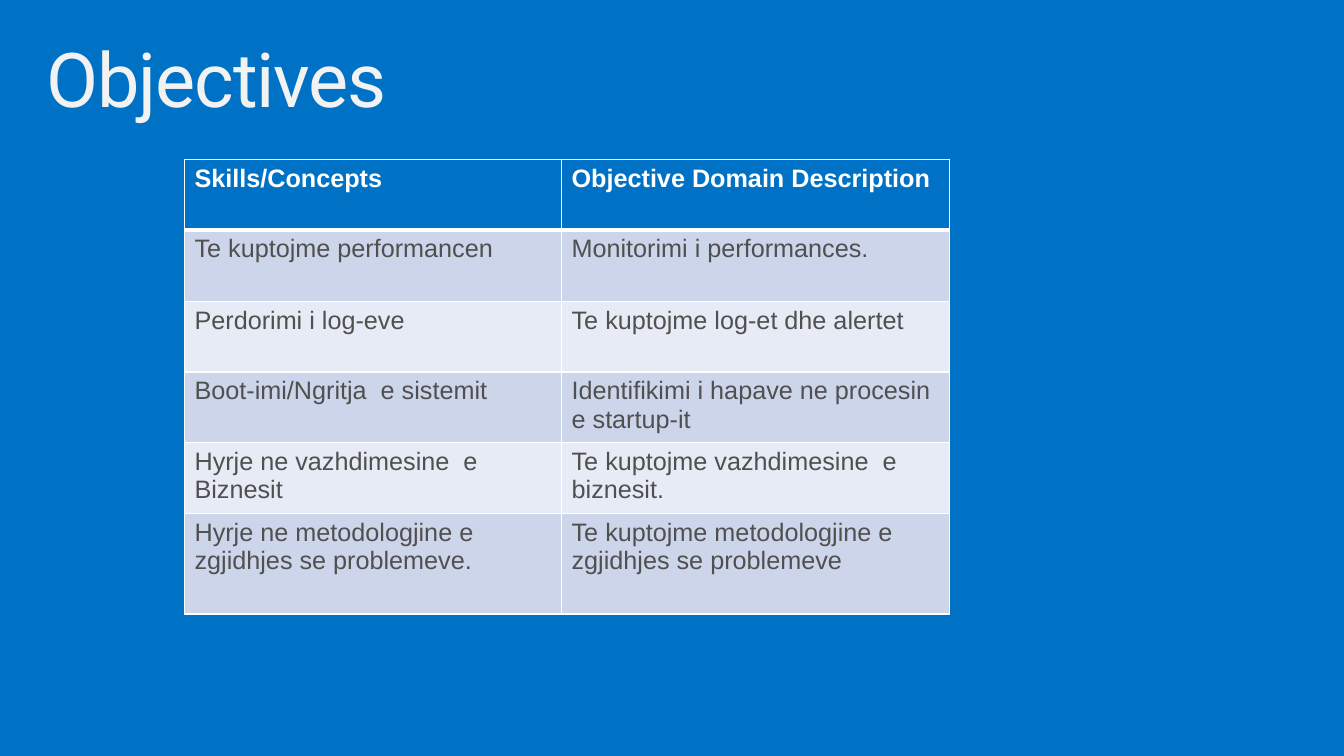
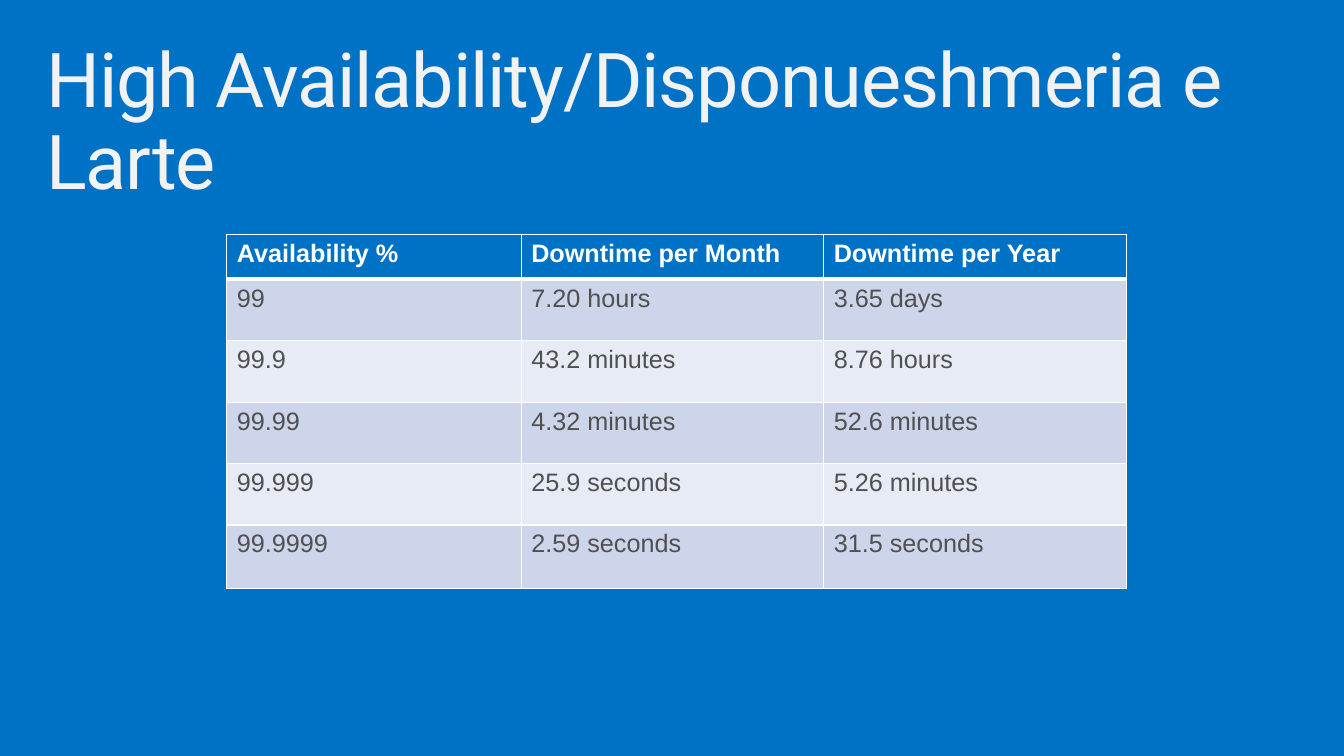
"""Build two slides, each with a large title over a banded table."""
from dataclasses import dataclass

from lxml import etree
from pptx import Presentation
from pptx import slide as sl
from pptx import table as tb
from pptx import util as u
from pptx.dml import color
from pptx.enum import text
from pptx.oxml import ns
from pptx.text import text as tx


@dataclass(frozen=True)
class Theme:
    background: str = "0072C6"
    title_color: str = "F2F2F2"
    header_color: str = "FFFFFF"
    body_color: str = "505050"
    border: str = "FFFFFF"
    bands: tuple[str, str] = ("CCD5EA", "E7EBF5")
    title_font: str = "Roboto"
    table_font: str = "Arial"
    title_size: float = 54
    table_size: float = 18
    title_tracking: float = -0.8
    thin: float = 1
    thick: float = 3


@dataclass(frozen=True)
class TableSlide:
    title: str
    left: float
    top: float
    columns: tuple[float, ...]
    heights: tuple[float, ...]
    rows: tuple[tuple[str, ...], ...]


THEME = Theme()

SLIDES = (
    TableSlide(
        title="Objectives",
        left=1.83,
        top=1.58,
        columns=(3.74, 3.85),
        heights=(0.7, 0.71, 0.7, 0.7, 0.7, 1),
        rows=(
            ("Skills/Concepts", "Objective Domain Description"),
            ("Te kuptojme performancen", "Monitorimi i performances."),
            ("Perdorimi i log-eve", "Te kuptojme log-et dhe alertet"),
            ("Boot-imi/Ngritja  e sistemit",
             "Identifikimi i hapave ne procesin e startup-it"),
            ("Hyrje ne vazhdimesine  e Biznesit",
             "Te kuptojme vazhdimesine  e biznesit."),
            ("Hyrje ne metodologjine e zgjidhjes se problemeve.",
             "Te kuptojme metodologjine e zgjidhjes se problemeve"),
        ),
    ),
    TableSlide(
        title="High Availability/Disponueshmeria e Larte",
        left=2.25,
        top=2.33,
        columns=(2.92, 3, 3),
        heights=(0.44, 0.61, 0.61, 0.61, 0.61, 0.63),
        rows=(
            ("Availability %", "Downtime per Month", "Downtime per Year"),
            ("99", "7.20 hours", "3.65 days"),
            ("99.9", "43.2 minutes", "8.76 hours"),
            ("99.99", "4.32 minutes", "52.6 minutes"),
            ("99.999", "25.9 seconds", "5.26 minutes"),
            ("99.9999", "2.59 seconds", "31.5 seconds"),
        ),
    ),
)


def rgb(value: str) -> color.RGBColor:
    return color.RGBColor.from_string(value)


def add_run(paragraph: tx._Paragraph, words: str, font: str, size: float,
            fill: str, bold: bool = False) -> tx._Run:
    run = paragraph.add_run()
    run.text = words
    run.font.name = font
    run.font.size = u.Pt(size)
    run.font.bold = bold
    run.font.color.rgb = rgb(fill)
    return run


def add_title(slide: sl.Slide, words: str) -> None:
    box = slide.shapes.add_textbox(
        u.Inches(0.3), u.Inches(0.32), u.Inches(12.75), u.Inches(0.98))
    frame = box.text_frame
    frame.word_wrap = True
    frame.vertical_anchor = text.MSO_ANCHOR.TOP
    frame.margin_left = frame.margin_right = u.Inches(0.16)
    frame.margin_top = frame.margin_bottom = u.Inches(0.1)
    paragraph = frame.paragraphs[0]
    paragraph.line_spacing = 0.9
    run = add_run(paragraph, words, THEME.title_font, THEME.title_size,
                  THEME.title_color)
    run.font._element.set("spc", str(round(THEME.title_tracking * 100)))


def add_borders(cell: tb._Cell, top: float, bottom: float) -> None:
    properties = cell._tc.get_or_add_tcPr()
    widths = {"L": THEME.thin, "R": THEME.thin, "T": top, "B": bottom}
    for side, width in widths.items():
        line = etree.SubElement(properties, ns.qn(f"a:ln{side}"),
                                w=str(u.Pt(width)))
        fill = etree.SubElement(line, ns.qn("a:solidFill"))
        etree.SubElement(fill, ns.qn("a:srgbClr"), val=THEME.border)


def style_cell(cell: tb._Cell, words: str, row: int) -> None:
    header = row == 0
    add_borders(cell,
                top=THEME.thick if row == 1 else THEME.thin,
                bottom=THEME.thick if header else THEME.thin)
    cell.fill.solid()
    cell.fill.fore_color.rgb = rgb(
        THEME.background if header else THEME.bands[(row - 1) % 2])
    cell.margin_left = cell.margin_right = u.Inches(0.1)
    cell.margin_top = cell.margin_bottom = u.Inches(0.05)
    add_run(cell.text_frame.paragraphs[0], words, THEME.table_font,
            THEME.table_size,
            THEME.header_color if header else THEME.body_color, header)


def add_table(slide: sl.Slide, content: TableSlide) -> None:
    table = slide.shapes.add_table(
        len(content.rows), len(content.columns),
        u.Inches(content.left), u.Inches(content.top),
        u.Inches(sum(content.columns)), u.Inches(sum(content.heights))).table
    for column, width in zip(table.columns, content.columns):
        column.width = u.Inches(width)
    for row, height in zip(table.rows, content.heights):
        row.height = u.Inches(height)
    for row_index, row_words in enumerate(content.rows):
        for column_index, words in enumerate(row_words):
            style_cell(table.cell(row_index, column_index), words, row_index)


def main() -> None:
    presentation = Presentation()
    presentation.slide_width = u.Inches(13.33)
    presentation.slide_height = u.Inches(7.5)
    blank = presentation.slide_layouts[6]
    master_fill = presentation.slide_master.background.fill
    master_fill.solid()
    master_fill.fore_color.rgb = rgb(THEME.background)
    for content in SLIDES:
        slide = presentation.slides.add_slide(blank)
        add_title(slide, content.title)
        add_table(slide, content)
    presentation.save("out.pptx")


if __name__ == "__main__":
    main()
